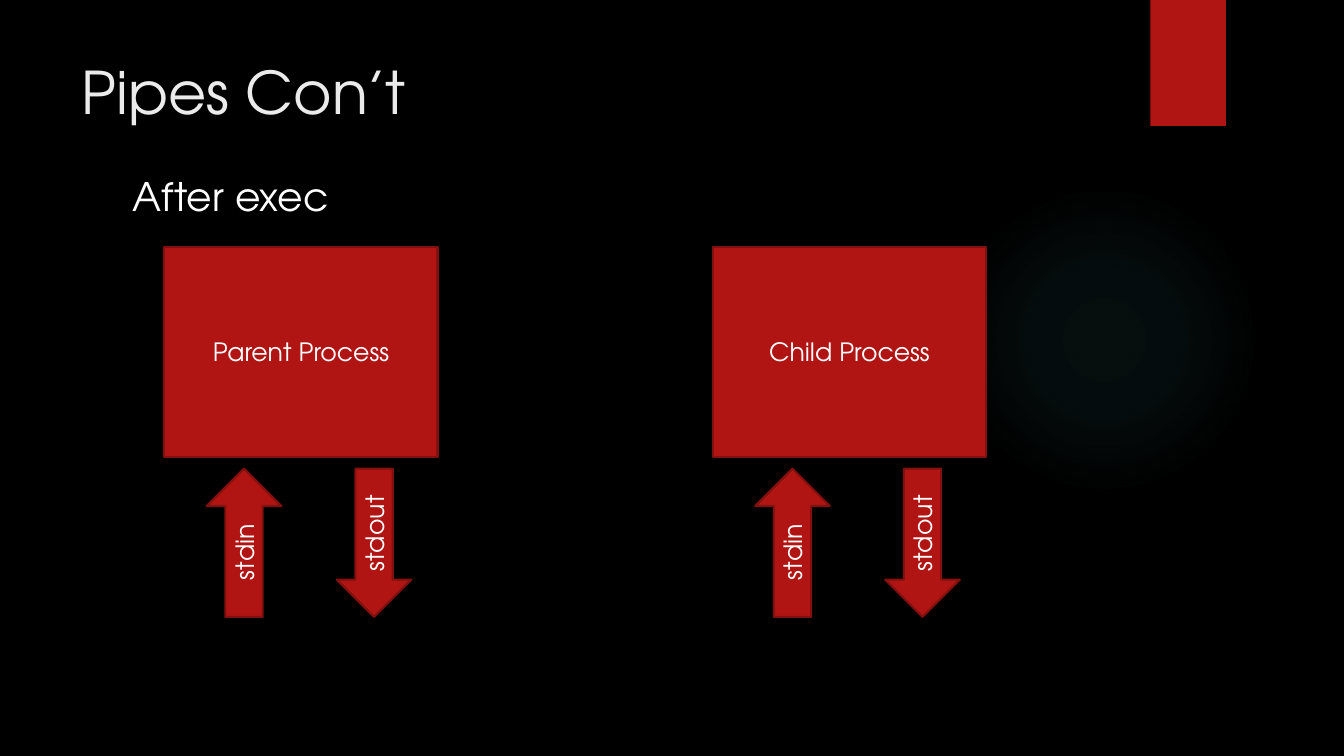
from lxml import etree
from pptx import Presentation
from pptx.dml.color import RGBColor
from pptx.enum import shapes as es, text as et
from pptx.oxml import parse_xml
from pptx.oxml.ns import qn
from pptx.util import Inches, Pt

FONT = "TeX Gyre Adventor"
BLACK = RGBColor(0x00, 0x00, 0x00)
RED = RGBColor(0xB0, 0x15, 0x13)
EDGE = RGBColor(0x82, 0x10, 0x0E)
PALE = RGBColor(0xEB, 0xEB, 0xEB)
WHITE = RGBColor(0xFF, 0xFF, 0xFF)
GLOW = RGBColor(0x50, 0xB9, 0xC1)
KIND = es.MSO_SHAPE
NS = "http://schemas.openxmlformats.org/drawingml/2006/main"


def write(frame, words, size, color, align):
    frame.word_wrap = True
    para = frame.paragraphs[0]
    para.alignment = align
    para.space_before = Pt(0)
    run = para.add_run()
    run.text = words
    run.font.name = FONT
    run.font.size = Pt(size)
    run.font.color.rgb = color


def shape(slide, kind, x, y, w, h):
    item = slide.shapes.add_shape(kind, Inches(x), Inches(y), Inches(w), Inches(h))
    item.shadow.inherit = False
    item.fill.solid()
    item.fill.fore_color.rgb = RED
    item.line.fill.background()
    return item


def node(slide, kind, x, y, w, h, words):
    item = shape(slide, kind, x, y, w, h)
    item.line.color.rgb = EDGE
    item.line.width = Pt(1.5)
    item.text_frame.vertical_anchor = et.MSO_ANCHOR.MIDDLE
    write(item.text_frame, words, 18, WHITE, et.PP_ALIGN.CENTER)
    return item


def decor(slide):
    # Soft round glow
    glow = shape(slide, KIND.OVAL, 9.41, 1.83, 3.08, 3.08)
    stops = "".join(
        f'<a:gs pos="{pos}000"><a:srgbClr val="{GLOW}">'
        f'<a:alpha val="{alpha}000"/></a:srgbClr></a:gs>'
        for pos, alpha in ((0, 7), (36, 6), (69, 0), (100, 0)))
    grad = parse_xml(
        f'<a:gradFill xmlns:a="{NS}" rotWithShape="1"><a:gsLst>{stops}</a:gsLst>'
        '<a:path path="circle"><a:fillToRect l="50000" t="50000" '
        'r="50000" b="50000"/></a:path></a:gradFill>')
    props = glow._element.spPr
    props.replace(props.find(qn("a:solidFill")), grad)
    # Corner tab
    shape(slide, KIND.RECTANGLE, 11.41, 0, 0.75, 1.25)


def holder(item, x, y, w, h, words, size, color):
    item.left, item.top = Inches(x), Inches(y)
    item.width, item.height = Inches(w), Inches(h)
    item.text_frame.vertical_anchor = et.MSO_ANCHOR.TOP
    props = item.text_frame.paragraphs[0]._p.get_or_add_pPr()
    props.set("marL", "0")
    props.set("indent", "0")
    etree.SubElement(props, qn("a:buNone"))
    write(item.text_frame, words, size, color, et.PP_ALIGN.LEFT)


def process(slide, x, y, words):
    # Process box with its two streams below
    node(slide, KIND.RECTANGLE, x, y, 2.71, 2.08, words)
    for dx, name, turn, vert in ((0.42, "stdin", 180, "vert"),
                                 (1.71, "stdout", 0, "vert270")):
        arrow = node(slide, KIND.DOWN_ARROW, x + dx, y + 2.2, 0.74, 1.47, name)
        arrow.rotation = turn
        arrow.text_frame._txBody.bodyPr.set("vert", vert)


def main():
    deck = Presentation()
    deck.slide_width, deck.slide_height = Inches(13.33), Inches(7.5)
    slide = deck.slides.add_slide(deck.slide_layouts[1])
    slide.background.fill.solid()
    slide.background.fill.fore_color.rgb = BLACK
    decor(slide)
    holder(slide.shapes.title, 0.71, 0.5, 10.29, 1.53, "Pipes Con’t", 42, PALE)
    holder(slide.placeholders[1], 1.21, 1.66, 9.78, 0.93, "After exec", 28, WHITE)
    for x, words in ((1.63, "Parent Process"), (7.07, "Child Process")):
        process(slide, x, 2.45, words)
    deck.save("out.pptx")


if __name__ == "__main__":
    main()
